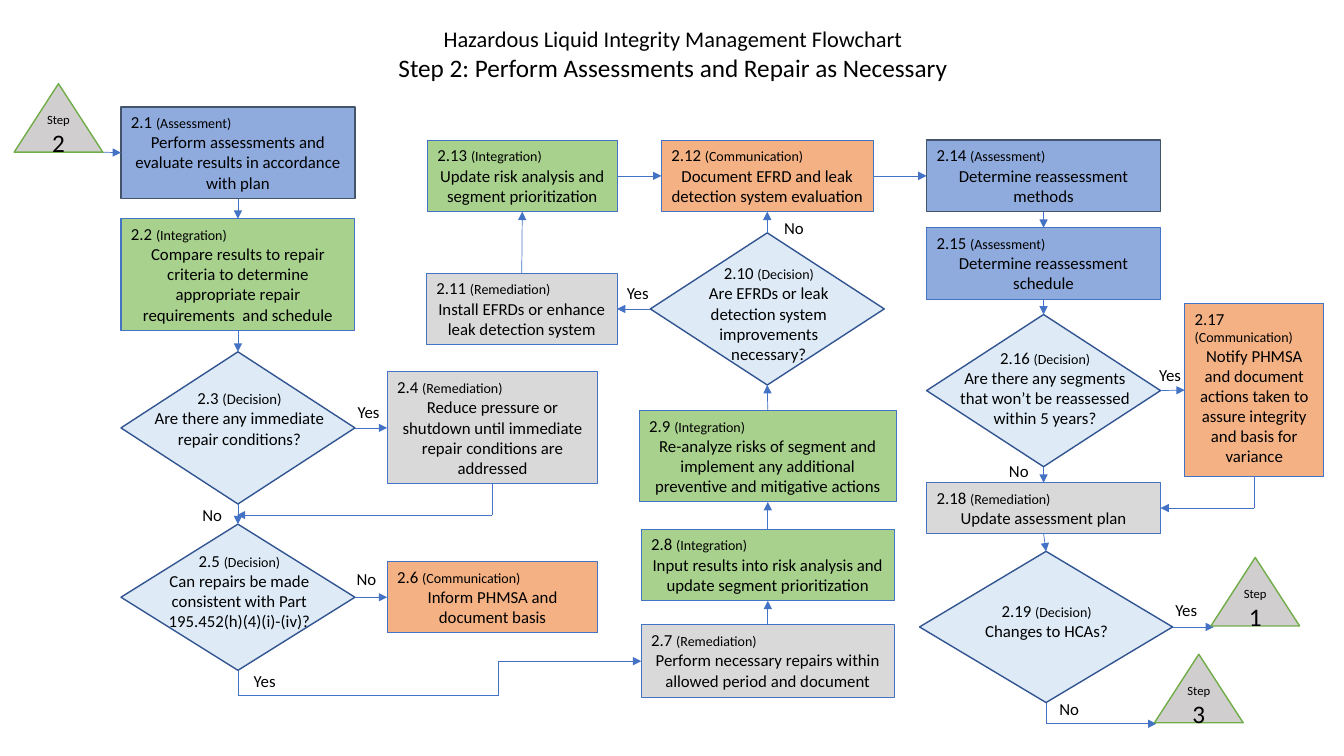
from lxml import etree
from pptx import Presentation
from pptx.dml.color import RGBColor
from pptx.enum.shapes import MSO_CONNECTOR, MSO_SHAPE
from pptx.enum.text import MSO_ANCHOR, PP_ALIGN
from pptx.oxml.ns import qn
from pptx.util import Pt

EMU_PER_PX = 9144
STRAIGHT = MSO_CONNECTOR.STRAIGHT
RECTANGLE = MSO_SHAPE.RECTANGLE
DIAMOND = MSO_SHAPE.FLOWCHART_DECISION
TRIANGLE = MSO_SHAPE.ISOSCELES_TRIANGLE
LEFT, CENTER = PP_ALIGN.LEFT, PP_ALIGN.CENTER
TOP, MIDDLE = MSO_ANCHOR.TOP, MSO_ANCHOR.MIDDLE
SITE_TOP, SITE_LEFT, SITE_BOTTOM, SITE_RIGHT = range(4)

BLUE, SLATE = "4472C4", "44546A"
CATEGORY_FILLS = {
    "Assessment": "8FAADC",
    "Integration": "A9D18E",
    "Remediation": "D9D9D9",
    "Communication": "F4B183",
}

BOXES = [
    ("2.1", "Assessment", "Perform assessments and evaluate results in accordance with plan", (120, 106, 232, 91)),
    ("2.2", "Integration", "Compare results to repair criteria to determine appropriate repair requirements  and schedule",
     (120, 217, 232, 111)),
    ("2.4", "Remediation", "Reduce pressure or shutdown until immediate repair conditions are addressed",
     (384, 369, 209, 111)),
    ("2.6", "Communication", "Inform PHMSA and document basis", (384, 557, 209, 71)),
    ("2.7", "Remediation", "Perform necessary repairs within allowed period and document", (636, 620, 251, 72)),
    ("2.8", "Integration", "Input results into risk analysis and update segment prioritization", (636, 525, 251, 71)),
    ("2.9", "Integration", "Re-analyze risks of segment and implement any additional preventive and mitigative actions",
     (634, 407, 255, 91)),
    ("2.11", "Remediation", "Install EFRDs or enhance leak detection system", (423, 271, 189, 71)),
    ("2.12", "Communication", "Document EFRD and leak detection system evaluation", (656, 139, 210, 71)),
    ("2.13", "Integration", "Update risk analysis and segment prioritization", (424, 139, 188, 71)),
    ("2.14", "Assessment", "Determine reassessment methods", (919, 139, 232, 71)),
    ("2.15", "Assessment", "Determine reassessment schedule", (919, 226, 232, 71)),
    ("2.17", "Communication", "Notify PHMSA and document actions taken to assure integrity and basis for variance",
     (1175, 301, 138, 172)),
    ("2.18", "Remediation", "Update assessment plan", (919, 479, 232, 50)),
]

DECISIONS = [
    ("2.3", 10.5, "Are there any immediate repair conditions?", (120, 349, 232, 151), (143, 380, 189, 71)),
    ("2.5", 10, "Can repairs be made consistent with Part 195.452(h)(4)(i)-(iv)?",
     (120, 520, 232, 145), (151, 541, 173, 91)),
    ("2.10", 10, "Are EFRDs or leak detection system improvements necessary?",
     (645, 231, 232, 151), (668, 256, 189, 111)),
    ("2.16", 10, "Are there any segments that won’t be reassessed within 5 years?",
     (919, 312, 232, 151), (942, 340, 189, 91)),
    ("2.19", 10, "Changes to HCAs?", (912, 547, 251, 150), (939, 591, 198, 50)),
]

LINKS = [
    ("2.1", SITE_BOTTOM, "2.2", SITE_TOP),
    ("2.2", SITE_BOTTOM, "2.3", SITE_TOP),
    ("2.3", SITE_RIGHT, "2.4", SITE_LEFT),
    ("2.3", SITE_BOTTOM, "2.5", SITE_TOP),
    ("2.5", SITE_RIGHT, "2.6", SITE_LEFT),
    ("2.7", SITE_TOP, "2.8", SITE_BOTTOM),
    ("2.8", SITE_TOP, "2.9", SITE_BOTTOM),
    ("2.9", SITE_TOP, "2.10", SITE_BOTTOM),
    ("2.10", SITE_TOP, "2.12", SITE_BOTTOM),
    ("2.10", SITE_LEFT, "2.11", SITE_RIGHT),
    ("2.11", SITE_TOP, "2.13", SITE_BOTTOM),
    ("2.13", SITE_RIGHT, "2.12", SITE_LEFT),
    ("2.12", SITE_RIGHT, "2.14", SITE_LEFT),
    ("2.14", SITE_BOTTOM, "2.15", SITE_TOP),
    ("2.15", SITE_BOTTOM, "2.16", SITE_TOP),
    ("2.16", SITE_RIGHT, "2.17", SITE_LEFT),
    ("2.16", SITE_BOTTOM, "2.18", SITE_TOP),
    ("2.18", SITE_BOTTOM, "2.19", SITE_TOP),
]

ROUTES = [
    [(102, 151), ("2.1", SITE_LEFT)],
    [("2.4", SITE_BOTTOM), (488.5, 511), (235, 511)],
    [("2.5", SITE_BOTTOM), (236, 690), (494, 690), (494, 656), ("2.7", SITE_LEFT)],
    [("2.17", SITE_BOTTOM), (1244, 504), ("2.18", SITE_RIGHT)],
    [("2.19", SITE_RIGHT), (1204, 622)],
    [("2.19", SITE_BOTTOM), (1037.5, 718), (1147, 718)],
]

LABELS = [
    ("Yes", 341, 394), ("Yes", 238, 661), ("Yes", 1152, 590), ("Yes", 1136, 357), ("Yes", 608, 276),
    ("No", 186, 496), ("No", 339, 559), ("No", 1036, 688), ("No", 986, 452), ("No", 763, 211),
]

STEPS = [("2", 14, 83), ("3", 1145, 649), ("1", 1201, 553)]


def px(length):
    return round(length * EMU_PER_PX)


def color(hex_string):
    return RGBColor.from_string(hex_string)


class Flowchart:
    font = "Calibri"
    text_color = "000000"

    def __init__(self, slide):
        self.slide = slide
        self.nodes = {}

    def set_lines(self, shape, lines, anchor=TOP):
        text_frame = shape.text_frame
        text_frame.word_wrap = True
        text_frame.vertical_anchor = anchor
        for index, (alignment, pieces) in enumerate(lines):
            paragraph = text_frame.add_paragraph() if index else text_frame.paragraphs[0]
            paragraph.alignment = alignment
            for text, size in pieces:
                run = paragraph.add_run()
                run.text = text
                run.font.size = Pt(size)
                run.font.name = self.font
                run.font.color.rgb = color(self.text_color)

    def shape(self, shapes, kind, bounds, fill, line, width):
        shape = shapes.add_shape(kind, *map(px, bounds))
        shape.shadow.inherit = False
        shape.fill.solid()
        shape.fill.fore_color.rgb = color(fill)
        shape.line.color.rgb = color(line)
        shape.line.width = Pt(width)
        return shape

    def text(self, shapes, bounds, lines):
        self.set_lines(shapes.add_textbox(*map(px, bounds)), lines)

    def box(self, number, category, text, bounds):
        line, width = (SLATE, 1) if number in ("2.1", "2.14") else (BLUE, 0.75)
        shape = self.shape(self.slide.shapes, RECTANGLE, bounds, CATEGORY_FILLS[category], line, width)
        self.set_lines(shape, [(LEFT, [(f"{number} ", 12), (f"({category})", 10)]), (CENTER, [(text, 12)])])
        self.nodes[number] = shape

    def decision(self, number, tag_size, text, bounds, text_bounds):
        shapes = self.slide.shapes.add_group_shape().shapes
        self.nodes[number] = self.shape(shapes, DIAMOND, bounds, "DEEBF7", "325491", 1)
        heading = [(f"{number} ", 12), ("(Decision)", tag_size)]
        self.text(shapes, text_bounds, [(CENTER, heading), (CENTER, [(text, 12)])])

    def step(self, number, left, top):
        shape = self.shape(self.slide.shapes, TRIANGLE, (left, top, 88, 68), "D0CECE", "70AD47", 1)
        shape.text_frame.margin_left = shape.text_frame.margin_right = 0
        self.set_lines(shape, [(CENTER, [("Step", 9)]), (CENTER, [(number, 18)])], MIDDLE)

    def leg(self, start, end, arrowhead):
        points = [(0, 0) if stop[0] in self.nodes else stop for stop in (start, end)]
        connector = self.slide.shapes.add_connector(STRAIGHT, *[px(value) for point in points for value in point])
        if start[0] in self.nodes:
            connector.begin_connect(self.nodes[start[0]], start[1])
        if end[0] in self.nodes:
            connector.end_connect(self.nodes[end[0]], end[1])
        connector.line.color.rgb = color(BLUE)
        connector.line.width = Pt(0.5)
        properties = connector._element.spPr
        if arrowhead:
            etree.SubElement(properties.find(qn("a:ln")), qn("a:tailEnd"), type="triangle")
        etree.SubElement(properties, qn("a:effectLst"))

    def route(self, stops):
        for index, (start, end) in enumerate(zip(stops, stops[1:]), 2):
            self.leg(start, end, index == len(stops))


def main():
    presentation = Presentation()
    presentation.slide_width, presentation.slide_height = px(1333), px(750)
    slide = presentation.slides.add_slide(presentation.slide_layouts[6])
    flowchart = Flowchart(slide)
    flowchart.text(slide.shapes, (369, 20, 597, 67), [
        (CENTER, [("Hazardous Liquid Integrity Management Flowchart", 16)]),
        (CENTER, [("Step 2: Perform Assessments and Repair as Necessary", 18)]),
    ])
    for box in BOXES:
        flowchart.box(*box)
    for decision in DECISIONS:
        flowchart.decision(*decision)
    for source, source_site, target, target_site in LINKS:
        flowchart.route([(source, source_site), (target, target_site)])
    for stops in ROUTES:
        flowchart.route(stops)
    for text, left, top in LABELS:
        flowchart.text(slide.shapes, (left, top, 49, 30), [(CENTER, [(text, 12)])])
    for step in STEPS:
        flowchart.step(*step)
    presentation.save("out.pptx")


if __name__ == "__main__":
    main()
